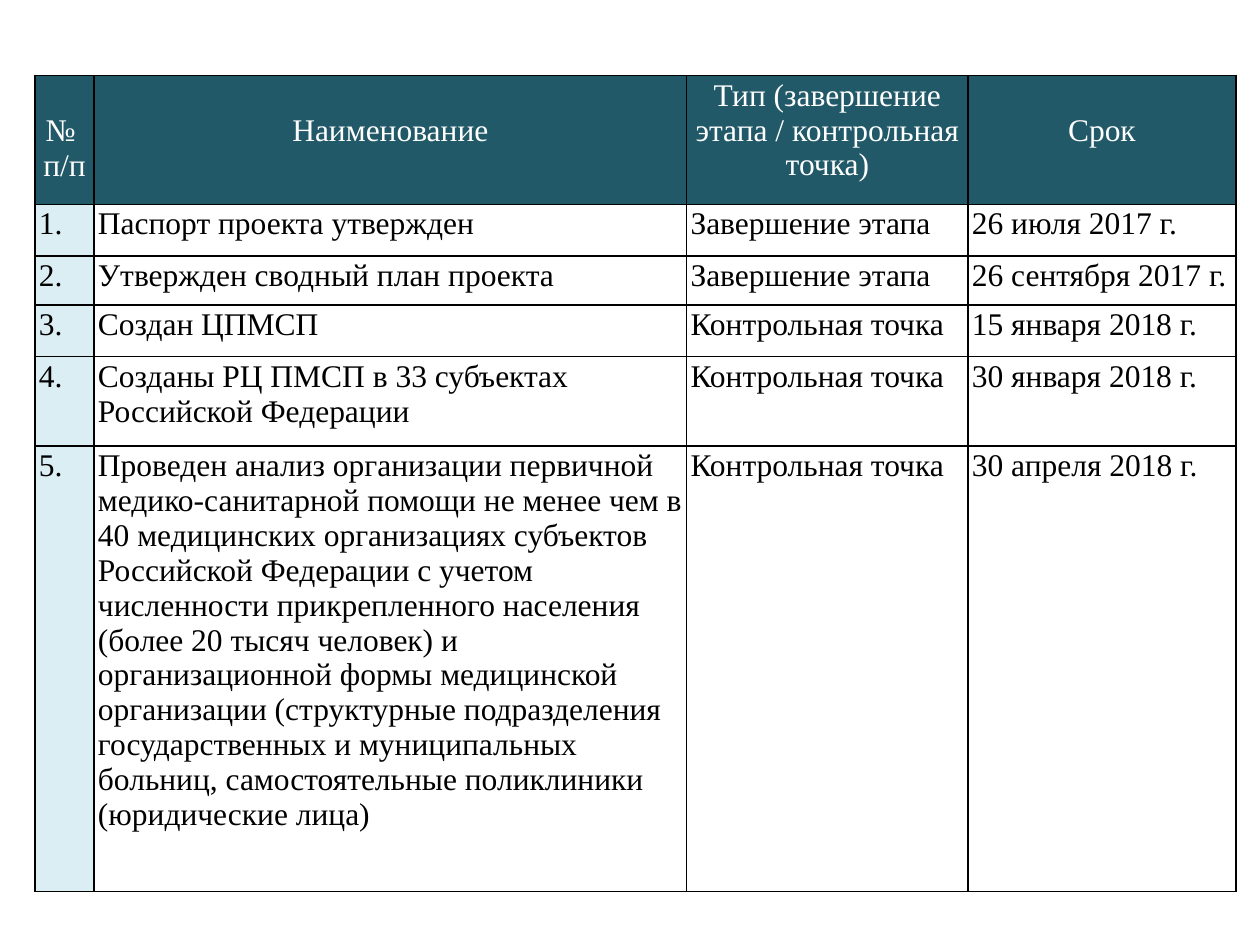
from lxml.etree import SubElement
from pptx import Presentation
from pptx.dml.color import RGBColor
from pptx.enum.text import PP_ALIGN
from pptx.oxml.ns import qn
from pptx.util import Pt

TEAL = RGBColor(0x21, 0x59, 0x68)
PALE_BLUE = RGBColor(0xDB, 0xEE, 0xF4)
WHITE = RGBColor(0xFF, 0xFF, 0xFF)
BLACK = RGBColor(0x00, 0x00, 0x00)

FONT = "Times New Roman"
SIZE = 18
MARGIN_X, MARGIN_Y = 2.2, 1.4
LINE_DROP = 20  # lowers the short headings by one line

COL_WIDTHS = [33.8, 338.6, 160.8, 153]
ROW_HEIGHTS = [73.6, 29.4, 28.2, 29.4, 51.2, 254.4]

STAGE = "Завершение этапа"
CHECKPOINT = "Контрольная точка"
HEADINGS = ["№\u00a0п/п", "Наименование",
            "Тип (завершение этапа / контрольная точка)", "Срок"]
MILESTONES = [
    ("Паспорт проекта утвержден", STAGE, "26 июля 2017 г."),
    ("Утвержден сводный план проекта", STAGE, "26 сентября 2017 г."),
    ("Создан ЦПМСП", CHECKPOINT, "15 января 2018 г."),
    ("Созданы РЦ ПМСП в 33 субъектах Российской Федерации",
     CHECKPOINT, "30 января 2018 г."),
    ("Проведен анализ организации первичной медико-санитарной помощи "
     "не менее чем в 40 медицинских организациях субъектов Российской "
     "Федерации с учетом численности прикрепленного населения (более 20 "
     "тысяч человек) и организационной формы медицинской организации "
     "(структурные подразделения государственных и муниципальных больниц, "
     "самостоятельные поликлиники (юридические лица)",
     CHECKPOINT, "30 апреля 2018 г."),
]


def set_borders(cell):
    tc_pr = cell._tc.get_or_add_tcPr()
    for side in ("a:lnL", "a:lnR", "a:lnT", "a:lnB"):
        ln = SubElement(tc_pr, qn(side), w=str(Pt(1)))
        fill = SubElement(ln, qn("a:solidFill"))
        SubElement(fill, qn("a:srgbClr"), val=str(BLACK))


def fill_cell(cell, text, fill, color, align=PP_ALIGN.LEFT, drop=0):
    set_borders(cell)
    cell.fill.solid()
    cell.fill.fore_color.rgb = fill
    cell.margin_left = cell.margin_right = Pt(MARGIN_X)
    cell.margin_top = Pt(MARGIN_Y + drop)
    cell.margin_bottom = Pt(MARGIN_Y)
    cell.text_frame.text = text
    p = cell.text_frame.paragraphs[0]
    p.alignment = align
    font = p.runs[0].font
    font.name, font.size, font.bold = FONT, Pt(SIZE), False
    font.color.rgb = color


def add_milestone_table(slide):
    frame = slide.shapes.add_table(
        len(ROW_HEIGHTS), len(COL_WIDTHS), Pt(20), Pt(43.2),
        Pt(sum(COL_WIDTHS)), Pt(sum(ROW_HEIGHTS)))
    table = frame.table
    for column, width in zip(table.columns, COL_WIDTHS):
        column.width = Pt(width)
    for row, height in zip(table.rows, ROW_HEIGHTS):
        row.height = Pt(height)

    # Header row: only the three-line heading starts at the top
    for c, heading in enumerate(HEADINGS):
        drop = 0 if c == 2 else LINE_DROP
        fill_cell(table.cell(0, c), heading, TEAL, WHITE, PP_ALIGN.CENTER, drop)

    # Numbered milestones
    for r, milestone in enumerate(MILESTONES, start=1):
        for c, text in enumerate((f"{r}.", *milestone)):
            fill = PALE_BLUE if c == 0 else WHITE
            fill_cell(table.cell(r, c), text, fill, BLACK)


def main():
    prs = Presentation()
    prs.slide_width, prs.slide_height = Pt(720), Pt(540)
    slide = prs.slides.add_slide(prs.slide_layouts[6])
    add_milestone_table(slide)
    prs.save("out.pptx")


if __name__ == "__main__":
    main()
